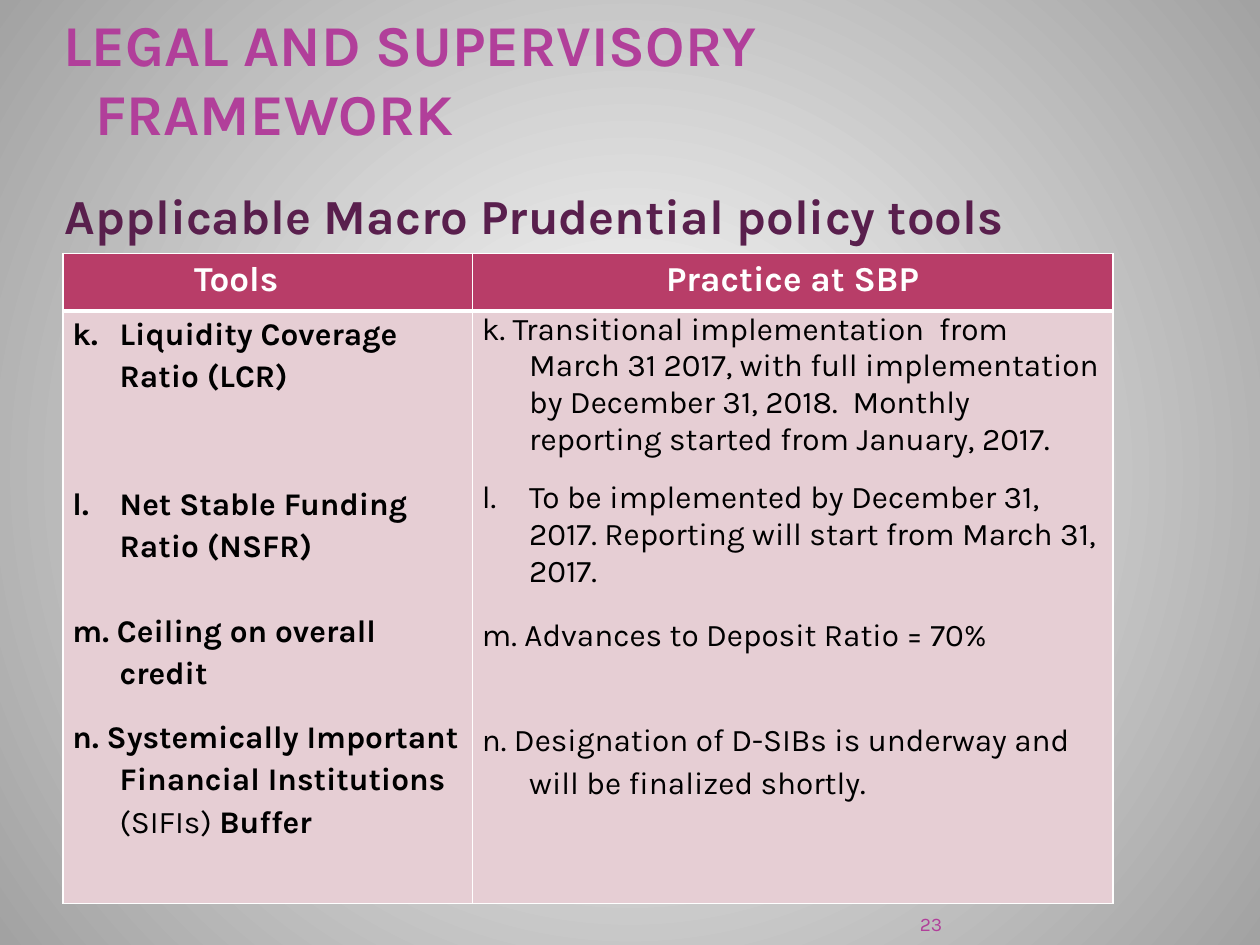
from dataclasses import dataclass

from lxml import etree
from pptx import Presentation
from pptx.dml.color import RGBColor
from pptx.enum.text import MSO_ANCHOR, PP_ALIGN
from pptx.oxml.ns import qn
from pptx.util import Pt

LEFT, CENTER, RIGHT = PP_ALIGN.LEFT, PP_ALIGN.CENTER, PP_ALIGN.RIGHT
TOP, BOTTOM = MSO_ANCHOR.TOP, MSO_ANCHOR.BOTTOM

FONT = "Karla"
WHITE = RGBColor(0xFF, 0xFF, 0xFF)
BLACK = RGBColor(0x00, 0x00, 0x00)
GREY = RGBColor(0xA2, 0xA2, 0xA2)
MAGENTA = RGBColor(0xB1, 0x3F, 0x9A)
PLUM = RGBColor(0x59, 0x1F, 0x4D)
HEADER_FILL = RGBColor(0xB8, 0x3D, 0x68)
BODY_FILL = RGBColor(0xE6, 0xCE, 0xD4)

HANGING = 27
LOOSE = 1.15
BLANK_LINE = 24.2  # height of one 18 pt line at loose spacing
FIRST_LETTER = 11  # numbering starts at "k."


@dataclass
class Entry:
    runs: list[tuple[str, bool]]  # text, bold
    size: float = 18
    color: RGBColor = BLACK
    align: PP_ALIGN = LEFT
    margin: float = 0
    indent: float = 0
    spacing: float = 1.0
    after: float = 0
    numbered: bool = False


@dataclass
class Box:
    left: float
    top: float
    width: float
    height: float
    insets: tuple[float, float]  # horizontal, vertical
    anchor: MSO_ANCHOR
    entry: Entry


def tool(runs: list[tuple[str, bool]], after: float, numbered: bool = False) -> Entry:
    return Entry(runs, margin=HANGING, indent=-HANGING, spacing=LOOSE,
                 after=after, numbered=numbered)


def practice(text: str, after: float, spacing: float = 1.0) -> Entry:
    return Entry([(text, False)], margin=HANGING, indent=-HANGING,
                 spacing=spacing, after=after)


BOXES = [
    Box(23.75, 37.5, 624, 46.75, (3.6, 0), BOTTOM,
        Entry([("LEGAL AND SUPERVISORY FRAMEWORK", True)], 33, MAGENTA,
              margin=HANGING, indent=-18.25)),
    Box(30, 102.25, 606, 41, (7.2, 3.6), TOP,
        Entry([("Applicable Macro Prudential policy tools", True)], 28, PLUM, after=6)),
    Box(492.5, 516.25, 46, 18, (0, 0), BOTTOM,
        Entry([("23", False)], 11, MAGENTA, RIGHT)),
]

HEADERS = [
    Entry([("Tools", True)], 20, WHITE, margin=67.7),
    Entry([("Practice at SBP", True)], 20, WHITE, CENTER),
]

TOOLS = [
    tool([("Liquidity Coverage Ratio (LCR)", True)], 2 * BLANK_LINE, numbered=True),
    tool([("Net Stable Funding Ratio (NSFR)", True)], BLANK_LINE, numbered=True),
    tool([("m. Ceiling on overall credit", True)], 12),
    tool([("n. Systemically Important Financial Institutions", True),
          (" (SIFIs) ", False), ("Buffer", True)], 12),
]

PRACTICES = [
    practice("k. Transitional implementation  from March 31 2017, with full "
             "implementation by December 31, 2018.  Monthly reporting started "
             "from January, 2017.", 12),
    practice("l.\tTo be implemented by December 31, 2017. Reporting will start "
             "from March 31, 2017.", 12),
    practice("m. Advances to Deposit Ratio = 70%", BLANK_LINE + 12, LOOSE),
    practice("n. Designation of D-SIBs is underway and will be finalized shortly.",
             6, LOOSE),
]


def write_entry(paragraph, entry: Entry) -> None:
    properties = paragraph._p.get_or_add_pPr()
    properties.set("marL", str(Pt(entry.margin)))
    properties.set("indent", str(Pt(entry.indent)))
    if entry.numbered:
        etree.SubElement(properties, qn("a:buAutoNum"), type="alphaLcPeriod",
                         startAt=str(FIRST_LETTER))
    else:
        etree.SubElement(properties, qn("a:buNone"))
    paragraph.alignment = entry.align
    paragraph.line_spacing = entry.spacing
    paragraph.space_before = Pt(0)
    paragraph.space_after = Pt(entry.after)
    for text, bold in entry.runs:
        run = paragraph.add_run()
        run.text = text
        run.font.name = FONT
        run.font.size = Pt(entry.size)
        run.font.bold = bold
        run.font.color.rgb = entry.color


def write_entries(text_frame, entries: list[Entry]) -> None:
    for index, entry in enumerate(entries):
        paragraph = text_frame.add_paragraph() if index else text_frame.paragraphs[0]
        write_entry(paragraph, entry)


def add_box(slide, box: Box) -> None:
    shape = slide.shapes.add_textbox(Pt(box.left), Pt(box.top),
                                     Pt(box.width), Pt(box.height))
    text_frame = shape.text_frame
    text_frame.word_wrap = True
    text_frame.vertical_anchor = box.anchor
    text_frame.margin_left = text_frame.margin_right = Pt(box.insets[0])
    text_frame.margin_top = text_frame.margin_bottom = Pt(box.insets[1])
    write_entries(text_frame, [box.entry])


def set_borders(cell, widths: dict[str, float]) -> None:
    properties = cell._tc.get_or_add_tcPr()
    for index, (side, width) in enumerate(widths.items()):
        line = etree.Element(qn(f"a:ln{side}"), w=str(Pt(width)))
        fill = etree.SubElement(line, qn("a:solidFill"))
        etree.SubElement(fill, qn("a:srgbClr"), val=str(WHITE))
        properties.insert(index, line)


def fill_cell(cell, entries: list[Entry], color: RGBColor,
              insets: tuple[float, float], widths: dict[str, float]) -> None:
    cell.fill.solid()
    cell.fill.fore_color.rgb = color
    cell.margin_left = cell.margin_right = Pt(insets[0])
    cell.margin_top = cell.margin_bottom = Pt(insets[1])
    cell.vertical_anchor = TOP
    set_borders(cell, widths)
    write_entries(cell.text_frame, entries)


def add_tools_table(slide) -> None:
    table = slide.shapes.add_table(2, 2, Pt(36), Pt(144.75), Pt(600), Pt(371.5)).table
    for column, width in zip(table.columns, (234, 366)):
        column.width = Pt(width)
    for row, height in zip(table.rows, (33, 338.5)):
        row.height = Pt(height)
    for column, (header, entries) in enumerate(zip(HEADERS, (TOOLS, PRACTICES))):
        fill_cell(table.cell(0, column), [header], HEADER_FILL, (7.2, 3.6),
                  {"L": 1, "R": 1, "T": 1, "B": 3})
        fill_cell(table.cell(1, column), entries, BODY_FILL, (5.4, 0),
                  {"L": 1, "R": 1, "T": 3, "B": 1})


def set_background(slide) -> None:
    fill = slide.background.fill
    fill.gradient()
    for stop, color in zip(fill.gradient_stops, (WHITE, GREY)):
        stop.color.rgb = color
    # Turn the linear gradient into a circle around the centre
    gradient = next(slide.element.iter(qn("a:gradFill")))
    gradient.remove(gradient.find(qn("a:lin")))
    circle = etree.SubElement(gradient, qn("a:path"), path="circle")
    etree.SubElement(circle, qn("a:fillToRect"),
                     {side: "50000" for side in "ltrb"})


def main() -> None:
    presentation = Presentation()
    presentation.slide_width, presentation.slide_height = Pt(720), Pt(540)
    slide = presentation.slides.add_slide(presentation.slide_layouts[6])
    set_background(slide)
    add_tools_table(slide)
    for box in BOXES:
        add_box(slide, box)
    presentation.save("out.pptx")


if __name__ == "__main__":
    main()
